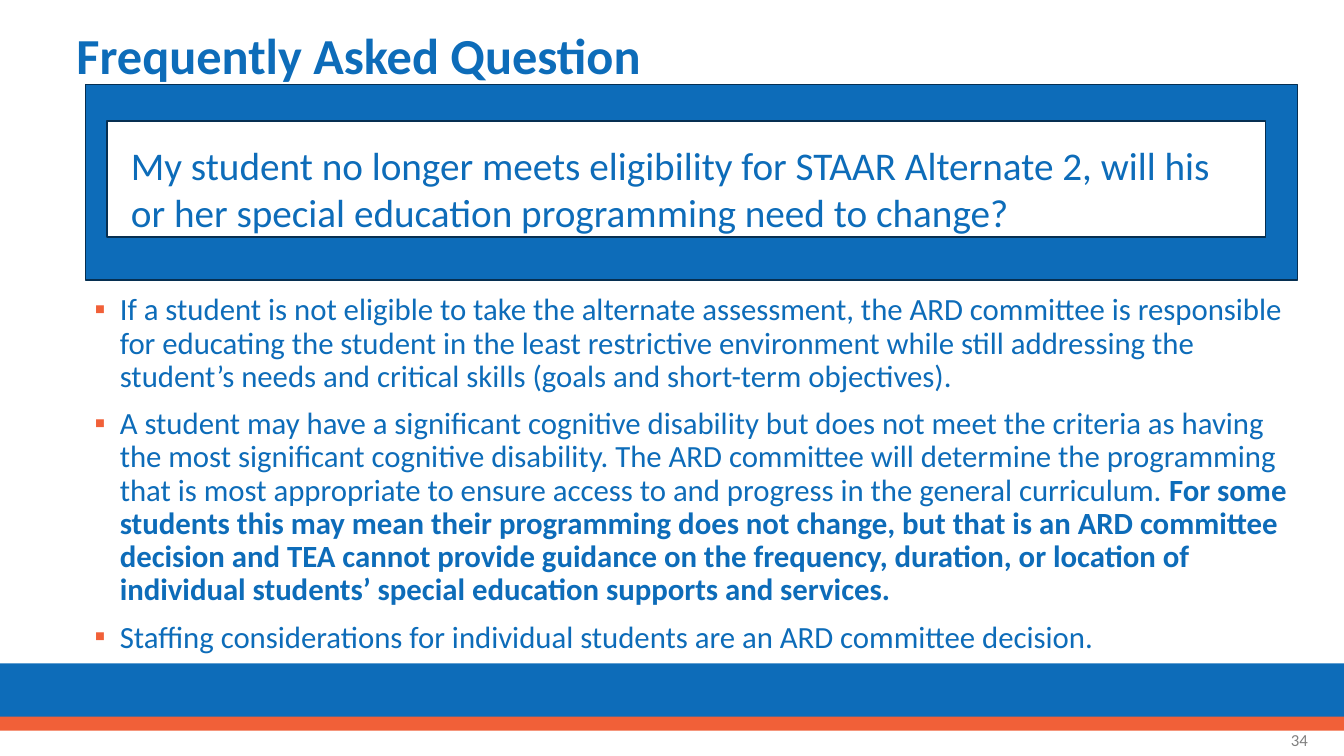
from lxml import etree
from pptx import Presentation
from pptx import util as u
from pptx.dml import color
from pptx.enum import shapes, text
from pptx.oxml import ns

WIDTH, HEIGHT = 13.33, 7.5
COLORS = {"blue": "0D6CB9", "orange": "F16038", "navy": "062F51", "white": "FFFFFF", "gray": "808080"}
FONT = "Calibri"

TITLE = "Frequently Asked Question"
QUESTION = (
    "My student no longer meets eligibility for STAAR Alternate 2, "
    "will his or her special education programming need to change?"
)
ANSWERS = [
    [("If a student is not eligible to take the alternate assessment, the ARD committee is responsible "
      "for educating the student in the least restrictive environment while still addressing the "
      "student’s needs and critical skills (goals and short-term objectives).", False)],
    [("A student may have a significant cognitive disability but does not meet the criteria as having "
      "the most significant cognitive disability. The ARD committee will determine the programming "
      "that is most appropriate to ensure access to and progress in the general curriculum. ", False),
     ("For some students this may mean their programming does not change, but that is an ARD committee "
      "decision and TEA cannot provide guidance on the frequency, duration, or location of "
      "individual students’ special education supports and services.", True)],
    [("Staffing considerations for individual students are an ARD committee decision.", False)],
]
PAGE = "34"

PANELS = [
    ((0, 6.58, WIDTH, 0.58), "blue", None),
    ((0, 7.11, WIDTH, 0.14), "orange", None),
    ((0.85, 0.84, 12.02, 1.94), "blue", "navy"),
    ((1.06, 1.2, 11.49, 1.15), "white", "navy"),
]


def rgb(name):
    return color.RGBColor.from_string(COLORS[name])


def add_panel(slide, box, fill, line):
    shape = slide.shapes.add_shape(shapes.MSO_SHAPE.RECTANGLE, *map(u.Inches, box))
    shape.shadow.inherit = False
    shape.fill.solid()
    shape.fill.fore_color.rgb = rgb(fill)
    if line:
        shape.line.color.rgb = rgb(line)
        shape.line.width = u.Pt(1)
    else:
        shape.line.fill.background()


def add_frame(slide, box, anchor=text.MSO_ANCHOR.TOP):
    frame = slide.shapes.add_textbox(*map(u.Inches, box)).text_frame
    frame.word_wrap = True
    frame.vertical_anchor = anchor
    return frame


def style(paragraph, size, ink="blue", bold=False):
    font = paragraph.font
    font.name, font.size, font.bold = FONT, u.Pt(size), bold
    font.color.rgb = rgb(ink)


def add_bullet(paragraph):
    properties = paragraph._p.get_or_add_pPr()
    properties.set("marL", str(u.Inches(0.25)))
    properties.set("indent", str(-u.Inches(0.25)))
    bullet_color = etree.SubElement(properties, ns.qn("a:buClr"))
    etree.SubElement(bullet_color, ns.qn("a:srgbClr"), val=COLORS["orange"])
    etree.SubElement(properties, ns.qn("a:buFont"), typeface=FONT)
    etree.SubElement(properties, ns.qn("a:buChar"), char="▪")


def add_answers(frame):
    for index, runs in enumerate(ANSWERS):
        paragraph = frame.add_paragraph() if index else frame.paragraphs[0]
        add_bullet(paragraph)
        paragraph.line_spacing = 0.9
        paragraph.space_before = u.Pt(10 if index else 0)
        style(paragraph, 22)
        for words, bold in runs:
            run = paragraph.add_run()
            run.text = words
            run.font.bold = bold


def main():
    presentation = Presentation()
    presentation.slide_width, presentation.slide_height = u.Inches(WIDTH), u.Inches(HEIGHT)
    slide = presentation.slides.add_slide(presentation.slide_layouts[6])

    for panel in PANELS:
        add_panel(slide, *panel)

    title = add_frame(slide, (0.66, 0.17, 12.16, 0.82), text.MSO_ANCHOR.MIDDLE).paragraphs[0]
    title.text = TITLE
    title.line_spacing = 0.9
    style(title, 36, bold=True)

    question = add_frame(slide, (1.2, 1.35, 11.19, 0.93)).paragraphs[0]
    question.text = QUESTION
    style(question, 28)

    add_answers(add_frame(slide, (0.84, 2.87, 12.04, 3.53)))

    page = add_frame(slide, (10.07, 7.14, 3, 0.4), text.MSO_ANCHOR.MIDDLE).paragraphs[0]
    page.text = PAGE
    page.alignment = text.PP_ALIGN.RIGHT
    style(page, 12, "gray")

    presentation.save("out.pptx")


if __name__ == "__main__":
    main()
